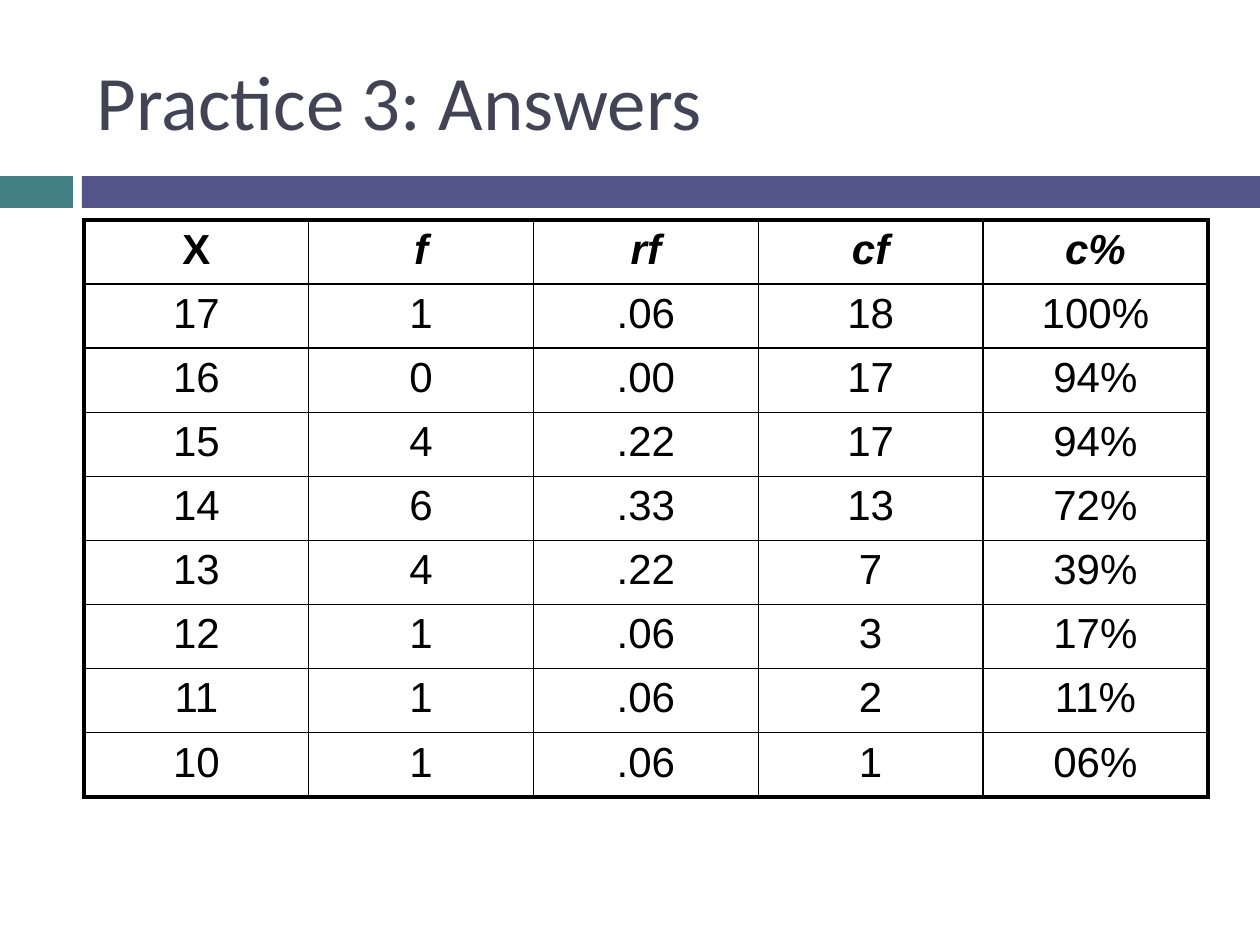
from lxml import etree
from pptx import Presentation
from pptx.dml.color import RGBColor
from pptx.enum.shapes import MSO_SHAPE
from pptx.enum.text import MSO_ANCHOR, PP_ALIGN
from pptx.oxml.ns import qn
from pptx.util import Emu, Pt

RECTANGLE = MSO_SHAPE.RECTANGLE
TOP, MIDDLE = MSO_ANCHOR.TOP, MSO_ANCHOR.MIDDLE
LEFT, CENTER = PP_ALIGN.LEFT, PP_ALIGN.CENTER

TITLE = "Practice 3: Answers"
HEADER = ["X", "f", "rf", "cf", "c%"]
ROWS = [
    ["17", "1", ".06", "18", "100%"],
    ["16", "0", ".00", "17", "94%"],
    ["15", "4", ".22", "17", "94%"],
    ["14", "6", ".33", "13", "72%"],
    ["13", "4", ".22", "7", "39%"],
    ["12", "1", ".06", "3", "17%"],
    ["11", "1", ".06", "2", "11%"],
    ["10", "1", ".06", "1", "06%"],
]
COLORS = {"teal": "438086", "purple": "53548A", "title": "424456", "black": "000000"}

# Lengths in px, as (left, top, width, height)
SLIDE = (1260, 945)
TITLE_AREA = (84, 32, 1124, 136)
BARS = [("teal", (0, 176, 73, 32)), ("purple", (82, 176, 1178, 32))]
TABLE_AREA = (84, 220, 1124, 577)
OUTER, INNER = 2.25, 1  # border widths in points


def px(length):
    return Emu(round(length * 914400 / 126))


def write(frame, text, size, font, color="black", align=LEFT, bold=False, italic=False):
    para = frame.paragraphs[0]
    para.alignment = align
    span = para.add_run()
    span.text = text
    span.font.size = Pt(size)
    span.font.name = font
    span.font.bold = bold
    span.font.italic = italic
    span.font.color.rgb = RGBColor.from_string(COLORS[color])


def add_borders(cell, widths):
    """Draw black left, right, top and bottom borders, with widths in points."""
    properties = cell._tc.get_or_add_tcPr()
    for position, (tag, width) in enumerate(zip(("lnL", "lnR", "lnT", "lnB"), widths)):
        line = etree.Element(qn(f"a:{tag}"), w=str(Pt(width)))
        fill = etree.SubElement(line, qn("a:solidFill"))
        etree.SubElement(fill, qn("a:srgbClr"), val=COLORS["black"])
        properties.insert(position, line)


def add_bar(page, color, area):
    bar = page.shapes.add_shape(RECTANGLE, *map(px, area))
    bar.shadow.inherit = False
    bar.fill.solid()
    bar.fill.fore_color.rgb = RGBColor.from_string(COLORS[color])
    bar.line.fill.background()


def add_title(page):
    box = page.shapes.add_textbox(*map(px, TITLE_AREA))
    box.text_frame.word_wrap = True
    box.text_frame.vertical_anchor = MIDDLE
    write(box.text_frame, TITLE, 44, "Calibri", color="title")


def add_frequency_table(page):
    content = [HEADER] + ROWS
    last_row, last_column = len(content) - 1, len(HEADER) - 1
    table = page.shapes.add_table(len(content), len(HEADER), *map(px, TABLE_AREA)).table
    table.first_row = table.horz_banding = False
    for column in table.columns:
        column.width = px(TABLE_AREA[2] / len(HEADER))
    for row in table.rows:
        row.height = px(TABLE_AREA[3] / len(content))
    for r, values in enumerate(content):
        for c, value in enumerate(values):
            cell = table.cell(r, c)
            cell.fill.background()
            cell.vertical_anchor = TOP
            is_header = r == 0
            write(cell.text_frame, value, 24, "Arial", align=CENTER,
                  bold=is_header, italic=is_header and c > 0)
            edges = (c == 0, c == last_column, r == 0, r == last_row)
            add_borders(cell, [OUTER if edge else INNER for edge in edges])


def main():
    deck = Presentation()
    deck.slide_width, deck.slide_height = map(px, SLIDE)
    page = deck.slides.add_slide(deck.slide_layouts[6])
    for color, area in BARS:
        add_bar(page, color, area)
    add_title(page)
    add_frequency_table(page)
    deck.save("out.pptx")


if __name__ == "__main__":
    main()
